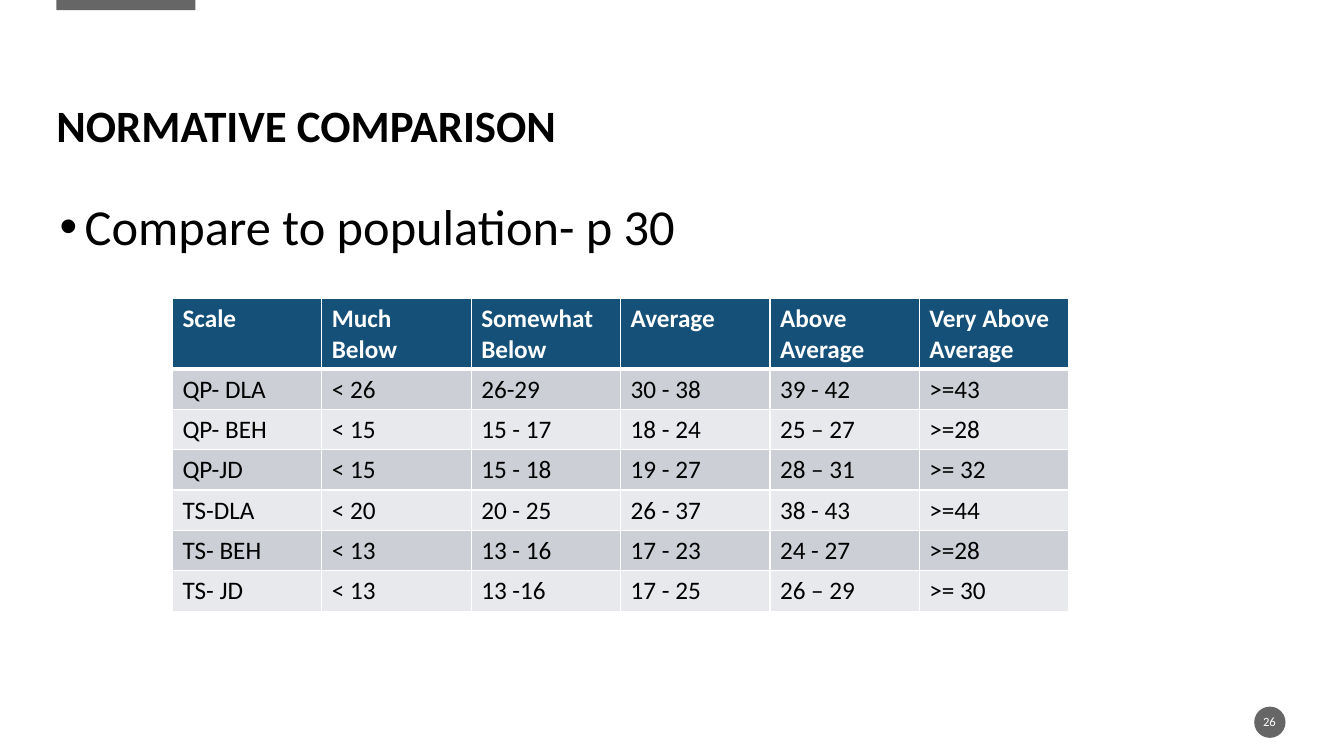
from dataclasses import dataclass

from lxml import etree
from pptx import Presentation
from pptx import util as u
from pptx.dml.color import RGBColor
from pptx.enum import shapes, text
from pptx.oxml import ns

WIDTH, HEIGHT = u.Inches(13.33), u.Inches(7.5)


@dataclass(frozen=True)
class Theme:
    """Colours, font and type sizes of the slide."""
    font: str = "Calibri"
    ink: str = "000000"
    paper: str = "FFFFFF"
    accent: str = "666666"
    header: str = "155078"
    bands: tuple = ("CCD0D6", "E8E9EC")
    title_size: int = 32
    body_size: int = 36
    table_size: int = 18
    number_size: int = 9


THEME = Theme()

NORMS = [
    ["Scale", "Much Below", "Somewhat Below", "Average", "Above Average", "Very Above Average"],
    ["QP- DLA", "< 26", "26-29", "30 - 38", "39 - 42", ">=43"],
    ["QP- BEH", "< 15", "15 - 17", "18 - 24", "25 – 27", ">=28"],
    ["QP-JD", "< 15", "15 - 18", "19 - 27", "28 – 31", ">= 32"],
    ["TS-DLA", "< 20", "20 - 25", "26 - 37", "38 - 43", ">=44"],
    ["TS- BEH", "< 13", "13 - 16", "17 - 23", "24 - 27", ">=28"],
    ["TS- JD", "< 13", "13 -16", "17 - 25", "26 – 29", ">= 30"],
]


def area(left, top, width, height):
    """Turn percentages of the slide's size into lengths."""
    return [u.Emu(int(share * side / 100))
            for share, side in zip((left, top, width, height), (WIDTH, HEIGHT) * 2)]


def style(paragraph, size, color, bold=False):
    """Set the font of a whole paragraph."""
    font = paragraph.font
    font.name, font.size, font.bold = THEME.font, u.Pt(size), bold
    font.color.rgb = RGBColor.from_string(color)


def add_ornament(slide, preset, place):
    """Draw a plain shape in the accent colour."""
    ornament = slide.shapes.add_shape(preset, *area(*place))
    ornament.shadow.inherit = False
    ornament.fill.solid()
    ornament.fill.fore_color.rgb = RGBColor.from_string(THEME.accent)
    ornament.line.fill.background()


def add_text(slide, words, place, size, color, bold=False, anchor=text.MSO_ANCHOR.MIDDLE):
    """Add a one-paragraph text without insets and return the paragraph."""
    frame = slide.shapes.add_textbox(*area(*place)).text_frame
    frame.word_wrap = True
    frame.vertical_anchor = anchor
    frame.margin_left = frame.margin_right = frame.margin_top = frame.margin_bottom = 0
    paragraph = frame.paragraphs[0]
    paragraph.text = words
    style(paragraph, size, color, bold)
    return paragraph


def add_bullet(paragraph, indent):
    """Give a paragraph a round bullet with a hanging indent."""
    properties = paragraph._p.get_or_add_pPr()
    properties.set("marL", str(indent))
    properties.set("indent", str(-indent))
    font = etree.SubElement(properties, ns.qn("a:buFont"), typeface="Arial")
    bullet = etree.SubElement(properties, ns.qn("a:buChar"), char="•")
    properties.find(ns.qn("a:defRPr")).addprevious(font)
    font.addnext(bullet)


def add_borders(cell, **widths):
    """Draw the cell's borders with widths in points by side."""
    properties = cell._tc.get_or_add_tcPr()
    for side in "LRTB":
        border = etree.SubElement(properties, ns.qn(f"a:ln{side}"), w=str(u.Pt(widths.get(side, 1))))
        fill = etree.SubElement(border, ns.qn("a:solidFill"))
        etree.SubElement(fill, ns.qn("a:srgbClr"), val=THEME.paper)


def add_norms(slide, place, header_height, row_height):
    """Add the table of norms with a dark header and banded rows."""
    norms = slide.shapes.add_table(len(NORMS), len(NORMS[0]), *area(*place)).table
    for row, scale in enumerate(NORMS):
        is_header = row == 0
        norms.rows[row].height = u.Inches(header_height if is_header else row_height)
        rules = {0: {"B": 3}, 1: {"T": 3}}.get(row, {})
        fill = THEME.header if is_header else THEME.bands[(row - 1) % 2]
        for column, words in enumerate(scale):
            cell = norms.cell(row, column)
            cell.text = words
            style(cell.text_frame.paragraphs[0], THEME.table_size,
                  THEME.paper if is_header else THEME.ink, is_header)
            add_borders(cell, **rules)
            cell.fill.solid()
            cell.fill.fore_color.rgb = RGBColor.from_string(fill)


def main():
    """Build the slide and save it."""
    deck = Presentation()
    deck.slide_width, deck.slide_height = WIDTH, HEIGHT
    slide = deck.slides.add_slide(deck.slide_layouts[6])

    add_ornament(slide, shapes.MSO_SHAPE.RECTANGLE, (4.2, -0.27, 10.35, 1.6))
    add_ornament(slide, shapes.MSO_SHAPE.OVAL, (93.32, 93.47, 2.33, 4.13))

    comparison = add_text(slide, "Compare to population- p 30", (4.43, 26.67, 89.65, 63.47),
                          THEME.body_size, THEME.ink, anchor=text.MSO_ANCHOR.TOP)
    comparison.line_spacing = 0.9
    comparison.space_before = u.Pt(10)
    add_bullet(comparison, u.Inches(0.25))

    number = add_text(slide, "26", (93.25, 94.13, 2.4, 2.67), THEME.number_size, THEME.paper)
    number.alignment = text.PP_ALIGN.CENTER

    title = add_text(slide, "NORMATIVE COMPARISON", (4.2, 7.33, 89.8, 19.33),
                     THEME.title_size, THEME.ink, bold=True)
    title.line_spacing = 0.9

    add_norms(slide, (12.83, 39.47, 66.69, 41.73), header_height=0.7, row_height=0.4)
    deck.save("out.pptx")


if __name__ == "__main__":
    main()
